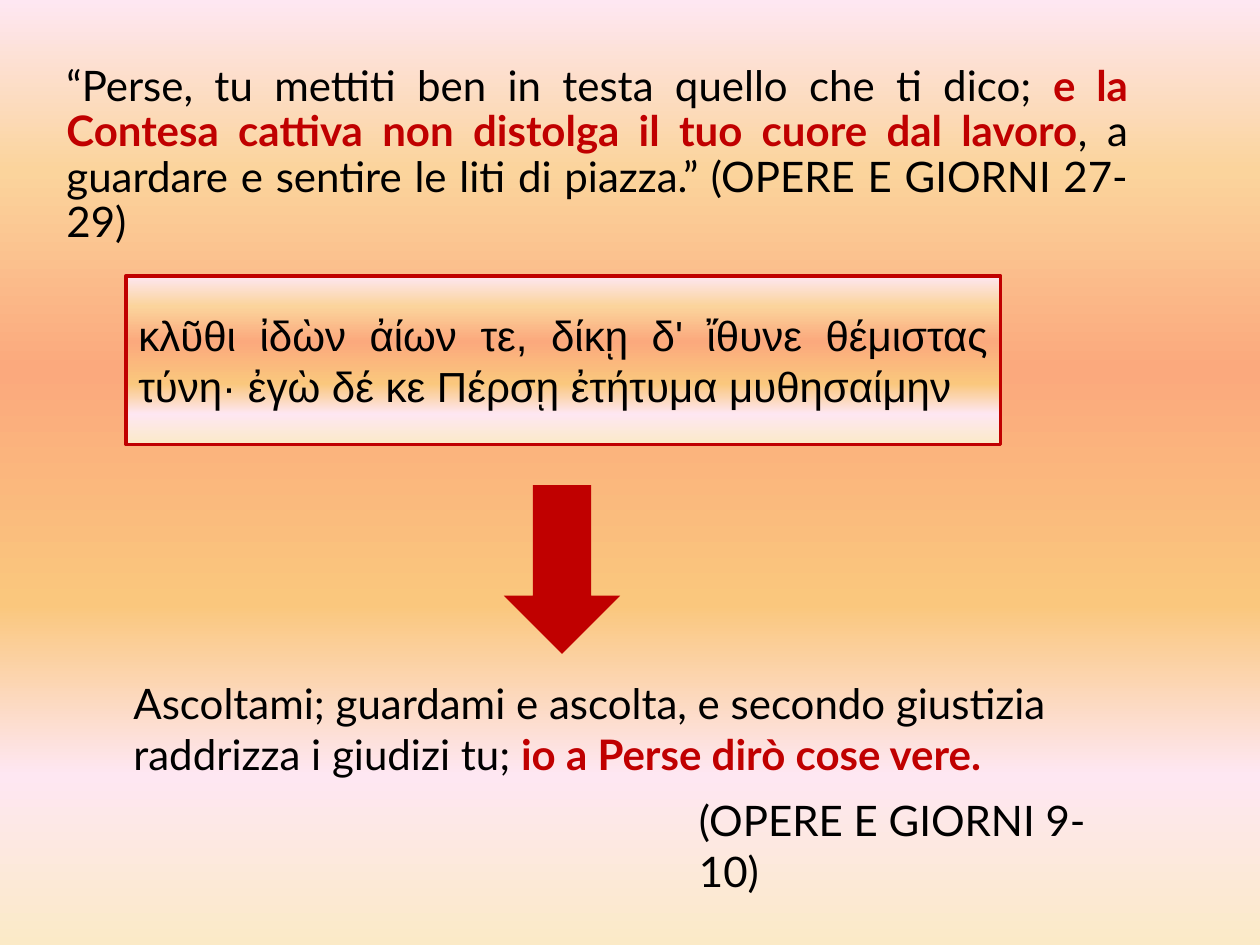
"""Build a slide with a quotation, Greek verses and their translation."""
from lxml import etree
from pptx import Presentation
from pptx.dml.color import RGBColor
from pptx.enum.shapes import MSO_SHAPE
from pptx.enum.text import MSO_ANCHOR, PP_ALIGN
from pptx.oxml.ns import qn
from pptx.util import Cm, Pt

RECTANGLE, DOWN_ARROW = MSO_SHAPE.RECTANGLE, MSO_SHAPE.DOWN_ARROW
TOP, MIDDLE = MSO_ANCHOR.TOP, MSO_ANCHOR.MIDDLE
LEFT, JUSTIFY = PP_ALIGN.LEFT, PP_ALIGN.JUSTIFY

BLACK, RED = "000000", "C00000"
SUNSET = [(0, "FBEAC7"), (18, "FEE7F2"), (36, "FAC77D"),
          (61, "FBA97D"), (82, "FBD49C"), (100, "FEE7F2")]

PASSAGES = [
    {"place": (1.09, 1.3, 21.9, 3.68), "anchor": MIDDLE,
     "format": {"alignment": JUSTIFY, "line_spacing": 0.9},
     "spans": [("“Perse, tu mettiti ben in testa quello che ti dico; ", False),
               ("e la Contesa cattiva non distolga il tuo cuore dal lavoro", True),
               (", a guardare e sentire le liti di piazza.” (OPERE E GIORNI 27-29)", False)]},
    {"place": (2.44, 13.54, 19.6, 2.31), "anchor": TOP, "format": {"alignment": LEFT},
     "spans": [("Ascoltami; guardami e ascolta, e secondo giustizia raddrizza i giudizi tu; ", False),
               ("io a Perse dirò cose vere.", True)]},
    {"place": (13.84, 15.9, 9.14, 1.27), "anchor": TOP, "format": {"alignment": LEFT},
     "spans": [("(OPERE E GIORNI 9-10)", False)]},
]
VERSES = [("κλῦθι ἰδὼν ἀίων τε, δίκῃ δ' ἴθυνε θέμιστας τύνη· "
           "ἐγὼ δέ κε Πέρσῃ ἐτήτυμα μυθησαίμην", False)]
VERSES_PLACE = (2.54, 5.56, 17.63, 3.4)
ARROW_PLACE = (10.16, 9.78, 2.34, 3.4)


def color(value):
    return RGBColor.from_string(value)


def lengths(place):
    return [Cm(length) for length in place]


def set_format(target, values):
    for name, value in values.items():
        setattr(target, name, value)


def paint_sunset(fill, element):
    fill.gradient()
    fill.gradient_angle = 90
    stops = element.find(".//" + qn("a:gsLst"))
    for stop in list(stops):
        stops.remove(stop)
    for percent, value in SUNSET:
        stop = etree.SubElement(stops, qn("a:gs"), pos=str(percent * 1000))
        etree.SubElement(stop, qn("a:srgbClr"), val=value)


def write(box, spans, font, anchor, layout):
    frame = box.text_frame
    set_format(frame, {"word_wrap": True, "vertical_anchor": anchor})
    para = frame.paragraphs[0]
    set_format(para, layout)
    for text, strong in spans:
        span = para.add_run()
        span.text = text
        set_format(span.font, {"name": font, "size": Pt(24), "bold": strong})
        span.font.color.rgb = color(RED if strong else BLACK)


def add_plain_shape(page, kind, place):
    shape = page.shapes.add_shape(kind, *lengths(place))
    shape.shadow.inherit = False
    return shape


def main():
    deck = Presentation()
    set_format(deck, {"slide_width": Cm(25.4), "slide_height": Cm(19.05)})
    page = deck.slides.add_slide(deck.slide_layouts[6])
    paint_sunset(page.background.fill, page.element)

    for passage in PASSAGES:
        box = page.shapes.add_textbox(*lengths(passage["place"]))
        write(box, passage["spans"], "Lato", passage["anchor"], passage["format"])

    verses = add_plain_shape(page, RECTANGLE, VERSES_PLACE)
    paint_sunset(verses.fill, verses.element)
    verses.line.color.rgb = color(RED)
    verses.line.width = Pt(2)
    write(verses, VERSES, "Arial", MIDDLE, {"alignment": JUSTIFY})

    arrow = add_plain_shape(page, DOWN_ARROW, ARROW_PLACE)
    arrow.fill.solid()
    arrow.fill.fore_color.rgb = color(RED)
    arrow.line.fill.background()

    deck.save("out.pptx")


if __name__ == "__main__":
    main()
